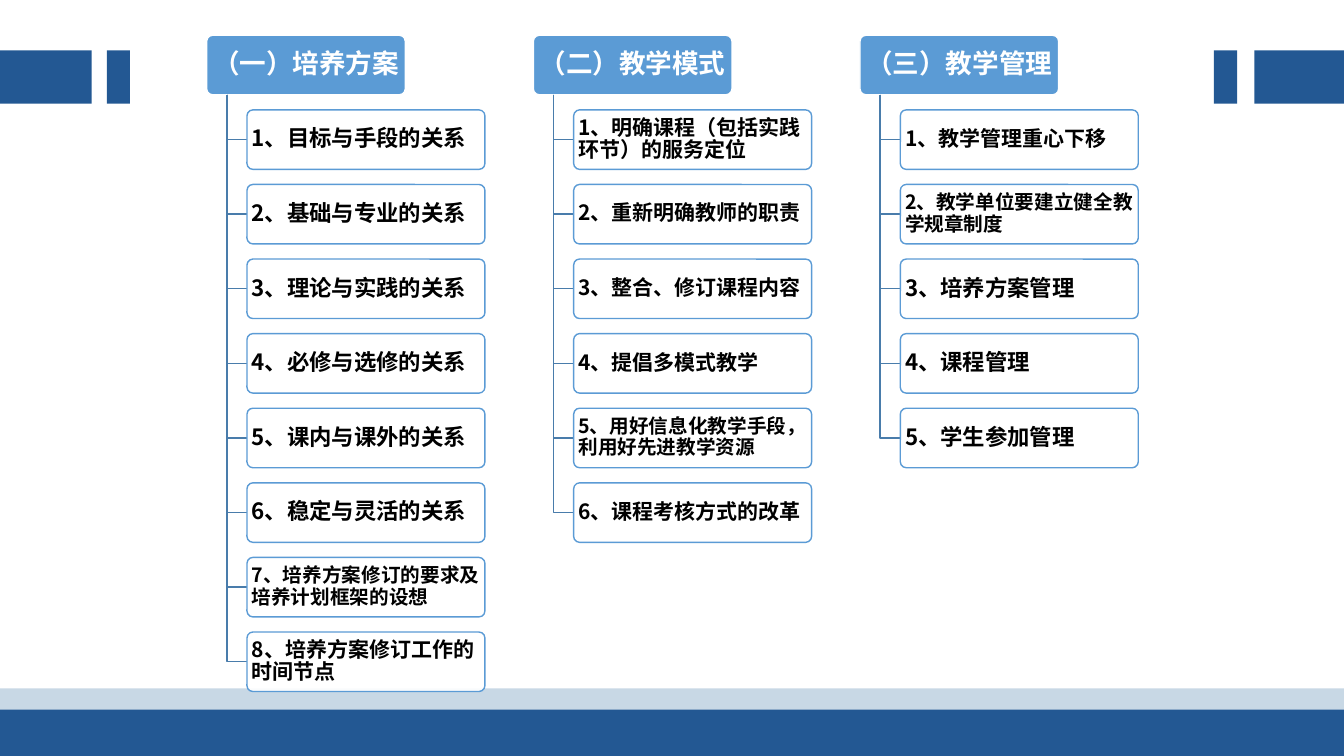
from lxml import etree
from pptx import Presentation
from pptx import util as u
from pptx.dml.color import RGBColor
from pptx.enum import shapes, text
from pptx.oxml import ns

FONT = "Noto Sans CJK SC"
COLORS = {
    "navy": "235893",
    "pale": "C8D8E5",
    "blue": "5B9BD5",
    "branch": "497CAB",
    "white": "FFFFFF",
    "black": "000000",
}
SLIDE_WIDTH, SLIDE_HEIGHT = 13.33, 7.5
TOP, BOX_HEIGHT, ROW_STEP = 0.35, 0.59, 0.74
HEADER_WIDTH, ITEM_WIDTH = 1.97, 2.36
BRANCH_INDENT, BRANCH_LENGTH = 0.2, 0.2
FIRST_COLUMN, COLUMN_STEP = 2.05, 3.24

# Heading, then each item with its text size in points
COLUMNS = [
    ("（一）培养方案", [
        ("1、目标与手段的关系", 16),
        ("2、基础与专业的关系", 16),
        ("3、理论与实践的关系", 16),
        ("4、必修与选修的关系", 16),
        ("5、课内与课外的关系", 16),
        ("6、稳定与灵活的关系", 16),
        ("7、培养方案修订的要求及培养计划框架的设想", 14),
        ("8、培养方案修订工作的时间节点", 15),
    ]),
    ("（二）教学模式", [
        ("1、明确课程（包括实践环节）的服务定位", 15),
        ("2、重新明确教师的职责", 15),
        ("3、整合、修订课程内容", 15),
        ("4、提倡多模式教学", 15),
        ("5、用好信息化教学手段，利用好先进教学资源", 14),
        ("6、课程考核方式的改革", 15),
    ]),
    ("（三）教学管理", [
        ("1、教学管理重心下移", 15),
        ("2、教学单位要建立健全教学规章制度", 14),
        ("3、培养方案管理", 16),
        ("4、课程管理", 16),
        ("5、学生参加管理", 16),
    ]),
]


def color(name):
    return RGBColor.from_string(COLORS[name])


def add_box(page, kind, left, top, width, height, fill, line=None):
    box = page.shapes.add_shape(kind, *map(u.Inches, (left, top, width, height)))
    box.shadow.inherit = False
    box.fill.solid()
    box.fill.fore_color.rgb = color(fill)
    if line:
        box.line.color.rgb = color(line)
        box.line.width = u.Pt(1)
    else:
        box.line.fill.background()
    return box


def add_label_box(page, left, top, width, words, size, ink, align, inset, fill, line):
    """Place a rounded box with one bold paragraph in it."""
    box = add_box(page, shapes.MSO_SHAPE.ROUNDED_RECTANGLE,
                  left, top, width, BOX_HEIGHT, fill, line)
    box.adjustments[0] = 0.1
    frame = box.text_frame
    frame.word_wrap = True
    frame.vertical_anchor = text.MSO_ANCHOR.MIDDLE
    frame.margin_left = frame.margin_right = u.Inches(inset)
    frame.margin_top = frame.margin_bottom = u.Inches(inset - 0.01)
    frame.text = words
    para = frame.paragraphs[0]
    para.alignment = align
    para.line_spacing = 0.9
    para.space_after = u.Pt(round(size * 0.35, 1))
    span = para.runs[0]
    span.font.name = FONT
    span.font.size = u.Pt(size)
    span.font.bold = True
    span.font.color.rgb = color(ink)
    east_asian = etree.SubElement(span.font._element, ns.qn("a:ea"))
    east_asian.set("typeface", FONT)
    return box


def make_translucent(box, percent):
    tint = box.fill._xPr.find(ns.qn("a:solidFill"))[0]
    etree.SubElement(tint, ns.qn("a:alpha")).set("val", str(percent * 1000))


def add_branch(page, left, top, bottom):
    """Draw the elbow from a heading down and across to one item."""
    builder = page.shapes.build_freeform(u.Inches(left), u.Inches(top))
    builder.add_line_segments(
        [(u.Inches(left), u.Inches(bottom)),
         (u.Inches(left + BRANCH_LENGTH), u.Inches(bottom))], close=False)
    branch = builder.convert_to_shape()
    branch.shadow.inherit = False
    branch.fill.background()
    branch.line.color.rgb = color("branch")
    branch.line.width = u.Pt(1)


def add_column(page, left, top, heading, items):
    add_label_box(page, left, top, HEADER_WIDTH, heading, 19, "white",
                  text.PP_ALIGN.CENTER, 0.04, "blue", "white")
    trunk = left + BRANCH_INDENT
    for row, (words, size) in enumerate(items, start=1):
        item_top = top + row * ROW_STEP
        add_branch(page, trunk, top + BOX_HEIGHT, item_top + BOX_HEIGHT / 2)
        box = add_label_box(page, trunk + BRANCH_LENGTH, item_top, ITEM_WIDTH,
                            words, size, "black", text.PP_ALIGN.LEFT, 0.03,
                            "white", "blue")
        make_translucent(box, 90)


def add_decoration(page):
    """Draw the footer bands and the two pairs of side blocks."""
    bands = [(0, 6.83, SLIDE_WIDTH, 0.55, "pale"),
             (0, 7.04, SLIDE_WIDTH, 0.46, "navy")]
    blocks = [(left, 0.5, width, 0.53, "navy")
              for left, width in ((0, 0.91), (1.06, 0.23), (12.44, 0.89), (12.04, 0.23))]
    for part in bands + blocks:
        add_box(page, shapes.MSO_SHAPE.RECTANGLE, *part)


def main():
    deck = Presentation()
    deck.slide_width = u.Inches(SLIDE_WIDTH)
    deck.slide_height = u.Inches(SLIDE_HEIGHT)
    page = deck.slides.add_slide(deck.slide_layouts[6])
    add_decoration(page)
    for index, (heading, items) in enumerate(COLUMNS):
        add_column(page, FIRST_COLUMN + index * COLUMN_STEP, TOP, heading, items)
    deck.save("out.pptx")


if __name__ == "__main__":
    main()
